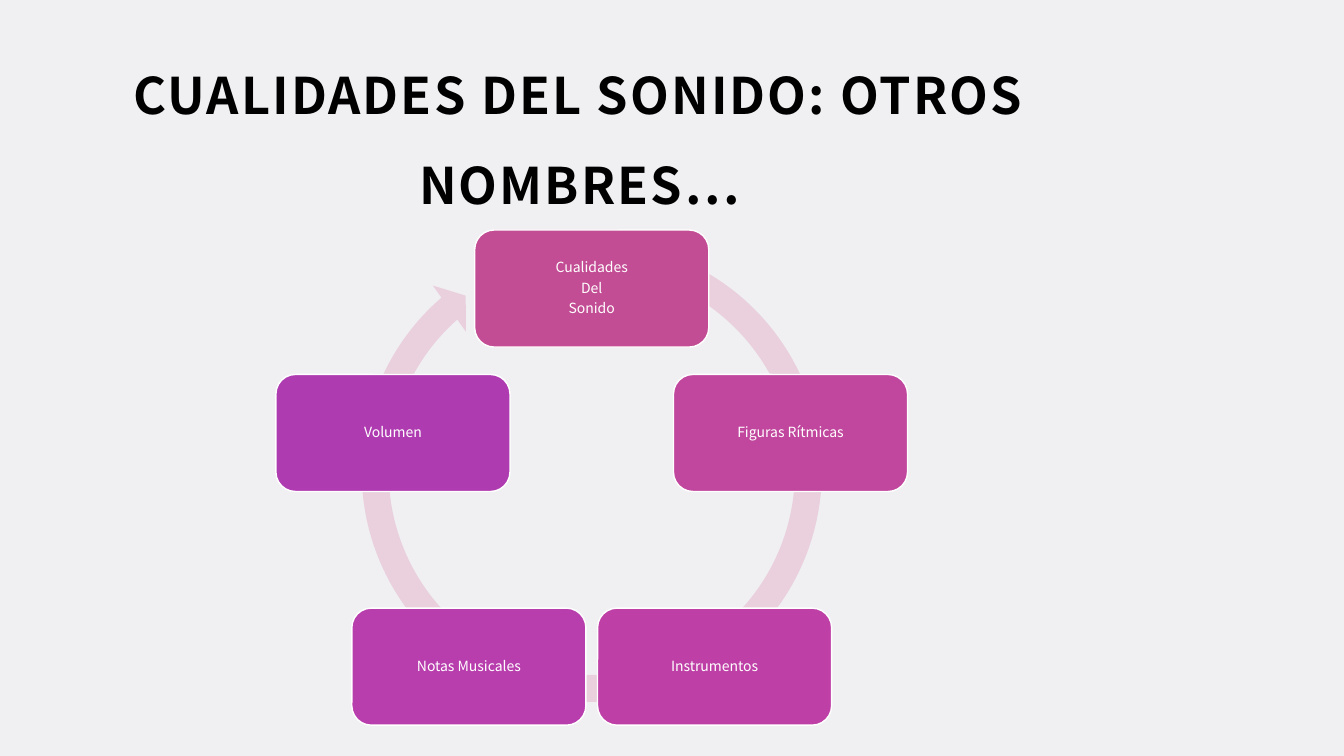
import math

import pptx
import pptx.dml.color
import pptx.enum.shapes
import pptx.enum.text
import pptx.oxml
import pptx.oxml.ns
import pptx.util

Pt = pptx.util.Pt
Kind = pptx.enum.shapes.MSO_SHAPE
COLORS = {
    "background": "F0F0F3",
    "title": "000000",
    "label": "FFFFFF",
    "outline": "FFFFFF",
    "arrow": "E9D0DC",
}
QUALITIES = [
    ("Cualidades\nDel\nSonido", "C34D94"),
    ("Figuras Rítmicas", "C1469D"),
    ("Instrumentos", "BE40A6"),
    ("Notas Musicales", "B83DAD"),
    ("Volumen", "AF3BB1"),
]
CENTER_X, CENTER_Y, RADIUS = 422.7, 355.4, 149.3
BOX_WIDTH, BOX_HEIGHT = 167.2, 83.6
ARROW_SIZE, ARROW_TOP = 350, 162


class CycleSlide:
    """Draws the title and the cycle of one slide in a shared style."""

    font_name = "Noto Sans CJK JP"

    def __init__(self, deck):
        self.slide = deck.slides.add_slide(deck.slide_layouts[5])
        self.paint(self.slide.background.fill, COLORS["background"])
        self.cycle = None

    def apply(self, target, values):
        for attribute, value in values.items():
            setattr(target, attribute, value)

    def paint(self, fill, color):
        fill.solid()
        fill.fore_color.rgb = pptx.dml.color.RGBColor.from_string(color)

    def set_text(self, frame, text, inset, size, color, bold, line_spacing):
        self.apply(frame, {
            "text": text,
            "word_wrap": True,
            "auto_size": pptx.enum.text.MSO_AUTO_SIZE.NONE,
            "vertical_anchor": pptx.enum.text.MSO_ANCHOR.MIDDLE,
            "margin_left": Pt(inset), "margin_right": Pt(inset),
            "margin_top": Pt(inset), "margin_bottom": Pt(inset),
        })
        for paragraph in frame.paragraphs:
            self.apply(paragraph, {
                "alignment": pptx.enum.text.PP_ALIGN.CENTER,
                "line_spacing": line_spacing,
            })
            for run in paragraph.runs:
                self.apply(run.font, {
                    "name": self.font_name, "size": Pt(size), "bold": bold,
                })
                self.paint(run.font.fill, color)

    def title(self, text, left, top, width, height):
        heading = self.slide.shapes.title
        self.apply(heading, {
            "left": Pt(left), "top": Pt(top),
            "width": Pt(width), "height": Pt(height),
        })
        self.set_text(heading.text_frame, text, 7.2, 36, COLORS["title"], True, 1.5)
        heading.text_frame.paragraphs[0].runs[0].font._element.set("spc", "150")

    def shape(self, kind, left, top, width, height, color):
        if self.cycle is None:
            self.cycle = self.slide.shapes.add_group_shape()
        figure = self.cycle.shapes.add_shape(
            kind, Pt(left), Pt(top), Pt(width), Pt(height))
        figure.shadow.inherit = False
        self.paint(figure.fill, color)
        return figure

    def arrow(self, left, top, size, adjustments):
        ring = self.shape(Kind.CIRCULAR_ARROW, left, top, size, size, COLORS["arrow"])
        ring.line.fill.background()
        for index, value in enumerate(adjustments):
            ring.adjustments[index] = value

    def box(self, text, left, top, color):
        quality = self.shape(
            Kind.ROUNDED_RECTANGLE, left, top, BOX_WIDTH, BOX_HEIGHT, color)
        self.paint(quality.line.fill, COLORS["outline"])
        quality.line.width = Pt(1)
        self.set_text(quality.text_frame, text, 7.2, 10, COLORS["label"], False, 0.9)
        for paragraph in quality.text_frame.paragraphs:
            paragraph.space_after = Pt(0)
            spacing = paragraph._p.pPr.find(pptx.oxml.ns.qn("a:spcAft"))
            spacing.clear()
            spacing.append(pptx.oxml.parse_xml(
                f'<a:spcPct {pptx.oxml.ns.nsdecls("a")} val="35000"/>'))


def main():
    deck = pptx.Presentation()
    deck.slide_width, deck.slide_height = Pt(960), Pt(540)
    sound = CycleSlide(deck)
    sound.title("CUALIDADES DEL SONIDO: OTROS NOMBRES…", 0, 44, 828, 89.3)
    sound.arrow(CENTER_X - ARROW_SIZE / 2, ARROW_TOP, ARROW_SIZE,
                (0.055, 3.307, 137.336, 174.118, 0.058))
    for position, (text, color) in enumerate(QUALITIES):
        angle = math.tau * position / len(QUALITIES)
        sound.box(text,
                  CENTER_X + RADIUS * math.sin(angle) - BOX_WIDTH / 2,
                  CENTER_Y - RADIUS * math.cos(angle) - BOX_HEIGHT / 2,
                  color)
    deck.save("out.pptx")


if __name__ == "__main__":
    main()
